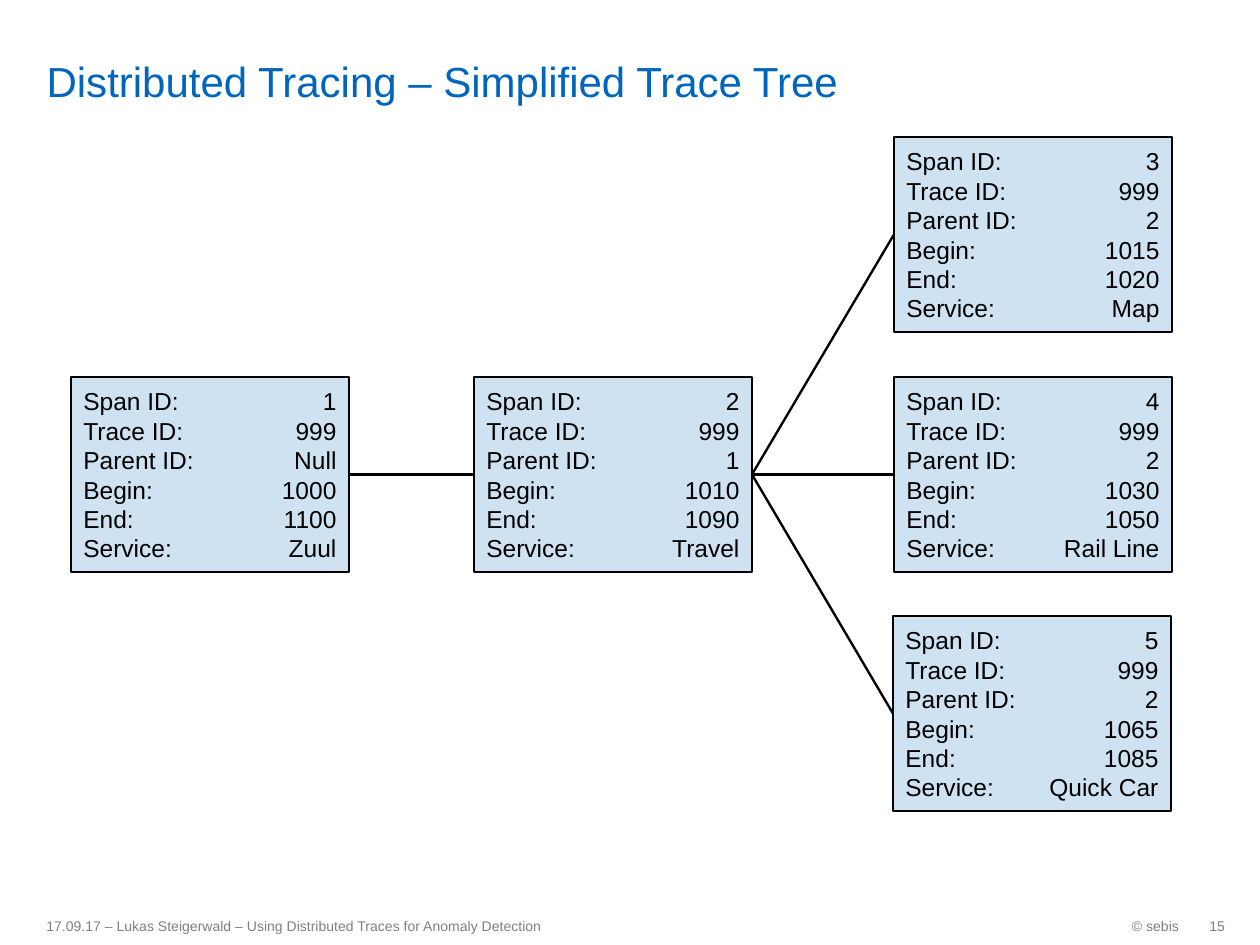
"""Build the slide showing a simplified trace tree of five spans."""
from dataclasses import dataclass

import pptx
import pptx.dml.color
import pptx.enum.shapes
import pptx.enum.text
import pptx.oxml
import pptx.oxml.ns
import pptx.util

PX = 914400 / 126
ALIGN = pptx.enum.text.PP_ALIGN
ANCHOR = pptx.enum.text.MSO_ANCHOR


def px(n):
    """Turn pixels into EMU."""
    return pptx.util.Emu(round(n * PX))


@dataclass(frozen=True)
class Theme:
    """Colours, type sizes and line widths."""
    font: str = "Arial"
    blue: str = "0065BD"
    black: str = "000000"
    grey: str = "808080"
    title: int = 24
    body: int = 14
    small: int = 8
    outline: float = 0.75
    edge: float = 1.35
    alpha: int = 19000


class SlideBuilder:
    """Draw styled elements on the current slide."""

    def __init__(self, slide, theme):
        """Keep the slide and its theme."""
        self.s = slide
        self.theme = theme

    def rgb(self, value):
        """Return a colour from its hex value."""
        return pptx.dml.color.RGBColor.from_string(value)

    def add_text(self, p, text, size, color, align=ALIGN.LEFT):
        """Add one styled run to a paragraph."""
        p.alignment = align
        r = p.add_run()
        r.text = text
        r.font.name = self.theme.font
        r.font.size = pptx.util.Pt(size)
        r.font.color.rgb = self.rgb(color)

    def title(self, text, x, y, w, h):
        """Fill and place the title placeholder."""
        sp = self.s.shapes.title
        sp.left, sp.top, sp.width, sp.height = map(px, (x, y, w, h))
        tf = sp.text_frame
        tf.auto_size = pptx.enum.text.MSO_AUTO_SIZE.NONE
        tf.vertical_anchor = ANCHOR.BOTTOM
        tf.margin_top = tf.margin_bottom = 0
        self.add_text(tf.paragraphs[0], text, self.theme.title, self.theme.blue)

    def footer(self, text, x, w, align=ALIGN.LEFT, right_inset=13):
        """Add a footer text on the bottom edge."""
        tf = self.s.shapes.add_textbox(px(x), px(906), px(w), px(39)).text_frame
        tf.word_wrap = True
        tf.vertical_anchor = ANCHOR.MIDDLE
        tf.margin_right = px(right_inset)
        self.add_text(tf.paragraphs[0], text, self.theme.small, self.theme.grey, align)

    def span(self, x, y, labels, values):
        """Add a span box with labels and values in two columns."""
        sp = self.s.shapes.add_shape(
            pptx.enum.shapes.MSO_SHAPE.RECTANGLE, px(x), px(y), px(278), px(195))
        sp.shadow.inherit = False
        sp.fill.solid()
        sp.fill.fore_color.rgb = self.rgb(self.theme.blue)
        clr = sp._element.spPr.find(".//" + pptx.oxml.ns.qn("a:srgbClr"))
        clr.append(pptx.oxml.parse_xml(
            f'<a:alpha {pptx.oxml.ns.nsdecls("a")} val="{self.theme.alpha}"/>'))
        sp.line.color.rgb = self.rgb(self.theme.black)
        sp.line.width = pptx.util.Pt(self.theme.outline)
        tf = sp.text_frame
        tf.word_wrap = True
        tf.vertical_anchor = ANCHOR.MIDDLE
        tf._txBody.bodyPr.set("numCol", "2")
        lines = [(t, ALIGN.LEFT) for t in labels] + [(t, ALIGN.RIGHT) for t in values]
        for i, (text, align) in enumerate(lines):
            p = tf.add_paragraph() if i else tf.paragraphs[0]
            self.add_text(p, text, self.theme.body, self.theme.black, align)
        return sp

    def edge(self, parent, child):
        """Join the right side of a parent to the left side of a child."""
        line = self.s.shapes.add_connector(
            pptx.enum.shapes.MSO_CONNECTOR.STRAIGHT, 0, 0, 0, 0)
        line.begin_connect(parent, 3)
        line.end_connect(child, 1)
        line.line.color.rgb = self.rgb(self.theme.black)
        line.line.width = pptx.util.Pt(self.theme.edge)
        line._element.spPr.append(pptx.oxml.parse_xml(
            f'<a:effectLst {pptx.oxml.ns.nsdecls("a")}/>'))


LABELS = ("Span ID:", "Trace ID:", "Parent ID:", "Begin:", "End:", "Service:")
SPANS = (
    (71, 377, ("1", "999", "Null", "1000", "1100", "Zuul")),
    (474, 377, ("2", "999", "1", "1010", "1090", "Travel")),
    (894, 137, ("3", "999", "2", "1015", "1020", "Map")),
    (894, 377, ("4", "999", "2", "1030", "1050", "Rail Line")),
    (893, 616, ("5", "999", "2", "1065", "1085", "Quick Car")),
)


def main():
    """Build and save the slide."""
    prs = pptx.Presentation()
    prs.slide_width, prs.slide_height = px(1260), px(945)
    b = SlideBuilder(prs.slides.add_slide(prs.slide_layouts[5]), Theme())
    b.title("Distributed Tracing – Simplified Trace Tree", 34, 6, 1038, 100)
    boxes = {values[0]: b.span(x, y, LABELS, values) for x, y, values in SPANS}
    for _, _, values in SPANS:
        if values[2] in boxes:
            b.edge(boxes[values[2]], boxes[values[0]])
    b.footer("17.09.17 – Lukas Steigerwald – Using Distributed Traces for Anomaly Detection",
             34, 596)
    b.footer("© sebis", 970, 222, ALIGN.RIGHT)
    b.footer("15", 1191, 34, ALIGN.RIGHT, right_inset=0)
    prs.save("out.pptx")


if __name__ == "__main__":
    main()
